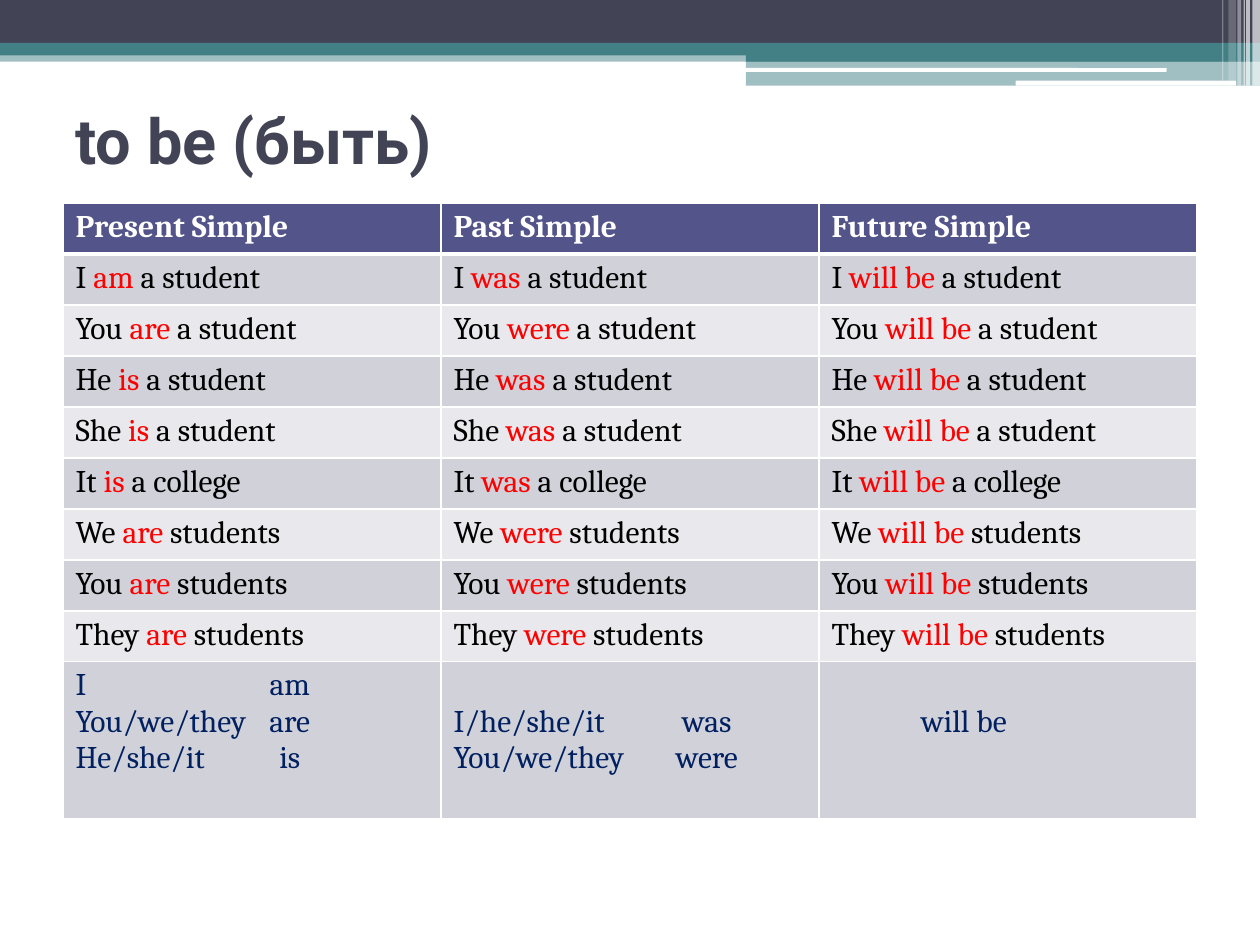
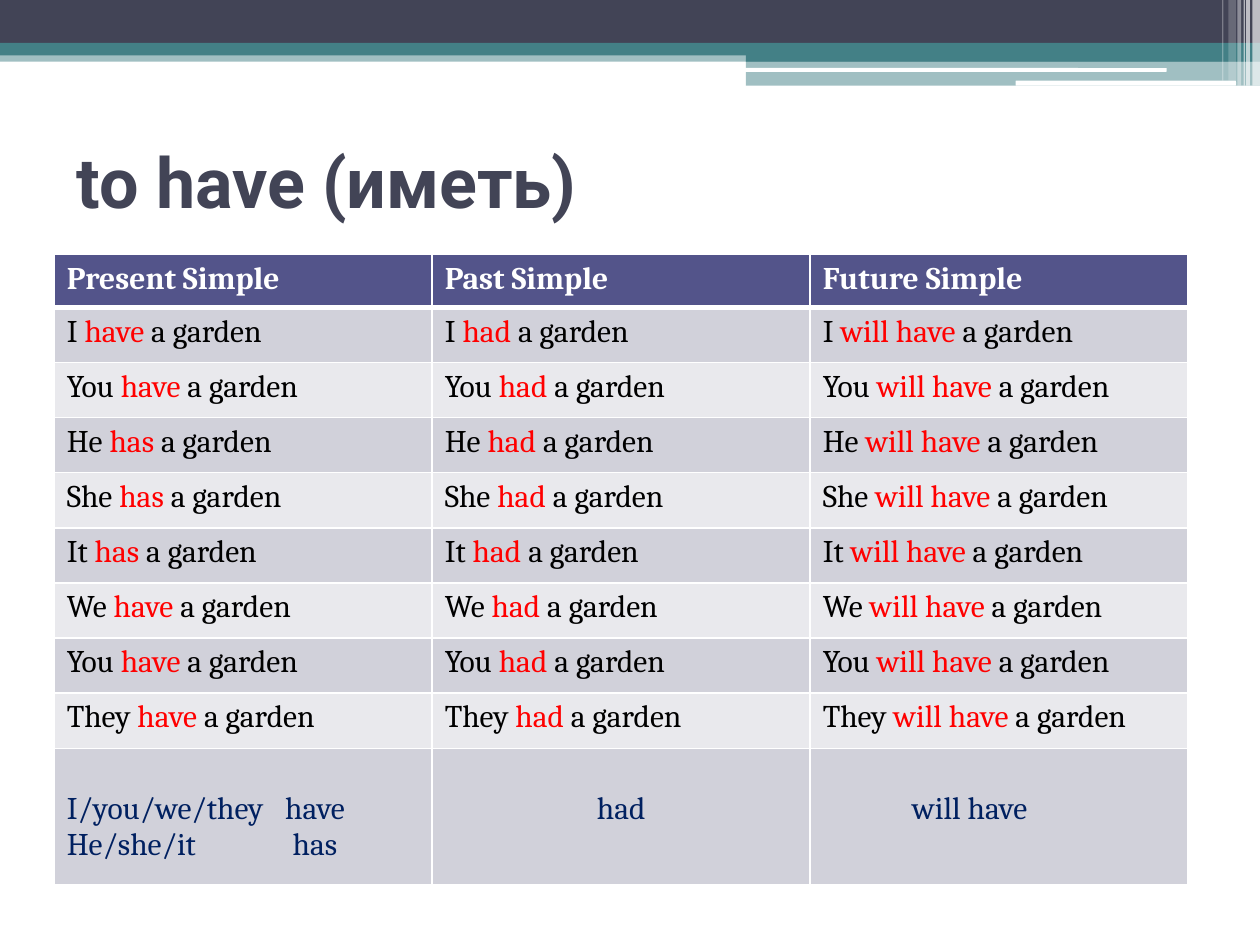
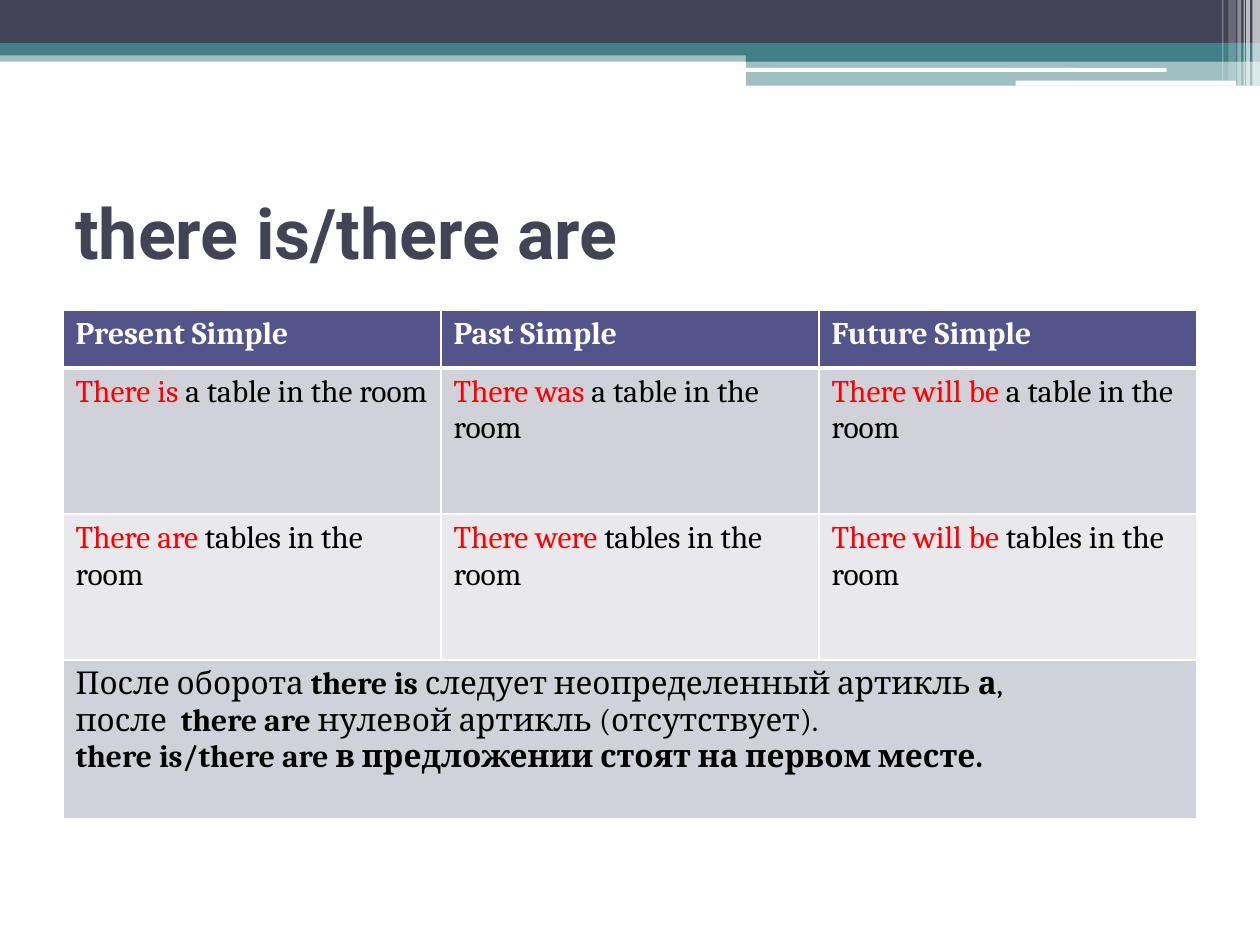
from lxml.etree import SubElement
from pptx import Presentation
from pptx.dml.color import RGBColor
from pptx.enum.shapes import MSO_SHAPE as SHAPE
from pptx.enum.text import MSO_ANCHOR as ANCHOR, PP_ALIGN as ALIGN
from pptx.oxml import parse_xml
from pptx.oxml.ns import nsdecls, qn
from pptx.util import Inches, Pt

WHITE = RGBColor(0xFF, 0xFF, 0xFF)
BLACK = RGBColor(0, 0, 0)
RED = RGBColor(0xFF, 0, 0)
NAVY = RGBColor(0, 0x20, 0x60)
SLATE = RGBColor(0x42, 0x44, 0x56)
TEAL = RGBColor(0x43, 0x80, 0x86)
INDIGO = RGBColor(0x53, 0x54, 0x8A)
DARK_ROW = RGBColor(0xD1, 0xD1, 0xDA)
LIGHT_ROW = RGBColor(0xE9, 0xE9, 0xED)

# outline, left, top, width, height, colour, opacity in percent
BANDS = [
    (SHAPE.RECTANGLE, 0, 0.4, 10, 0.09, TEAL, 50),
    (SHAPE.RECTANGLE, 0, 0, 10, 0.34, SLATE, 100),
    (SHAPE.RECTANGLE, 0, 0.34, 10, 0.1, TEAL, 100),
    (SHAPE.RECTANGLE, 5.92, 0.39, 4.08, 0.1, TEAL, 100),
    (SHAPE.RECTANGLE, 5.92, 0.48, 4.08, 0.2, TEAL, 50),
    (SHAPE.ROUNDED_RECTANGLE, 5.91, 0.54, 3.35, 0.03, WHITE, 100),
    (SHAPE.ROUNDED_RECTANGLE, 8.06, 0.64, 1.75, 0.04, WHITE, 100),
    (SHAPE.RECTANGLE, 9.94, 0, 0.06, 0.68, WHITE, 65),
    (SHAPE.RECTANGLE, 9.89, 0, 0.03, 0.68, WHITE, 65),
    (SHAPE.RECTANGLE, 9.87, 0, 0.01, 0.68, WHITE, 60),
    (SHAPE.RECTANGLE, 9.82, 0, 0.03, 0.68, WHITE, 40),
    (SHAPE.RECTANGLE, 9.75, 0, 0.06, 0.64, WHITE, 20),
    (SHAPE.RECTANGLE, 9.7, 0, 0.01, 0.64, WHITE, 30),
]

TENSES = ["Present Simple", "Past Simple", "Future Simple"]
SUBJECTS = ["I", "You", "He", "She", "It", "We", "You", "They"]
AM_ARE_IS = ["am", "are", "is", "is", "is", "are", "are", "are"]
WAS_WERE = ["was", "were", "was", "was", "was", "were", "were", "were"]
HAVE_HAS = ["have", "have", "has", "has", "has", "have", "have", "have"]
COMPLEMENTS = ["a student"] * 4 + ["a college"] + ["students"] * 3

be_rows = [
    [f"{subject} *{verb}* {rest}" for verb in (present, past, "will be")]
    for subject, present, past, rest in zip(SUBJECTS, AM_ARE_IS, WAS_WERE, COMPLEMENTS)
]
have_rows = [
    [f"{subject} *{verb}* a garden" for verb in (present, "had", "will have")]
    for subject, present in zip(SUBJECTS, HAVE_HAS)
]
there_rows = [
    [f"*There {verb}* a table in the room" for verb in ("is", "was", "will be")],
    [f"*There {verb}* tables in the room" for verb in ("are", "were", "will be")],
]

LINE = 0.29
# text, lines left free above, paragraph format
BE_SUMMARY = [
    ("I\tam\nYou/we/they\tare\nHe/she/it\tis", 0, {"tab": 1.7}),
    ("I/he/she/it\twas\nYou/we/they\twere", 1, {"tab": 2.01}),
    ("will be", 1, {"indent": 0.71}),
]
HAVE_SUMMARY = [
    ("I/you/we/they\thave\nHe/she/it\thas", 1, {"tab": 1.97}),
    ("had", 1, {"align": ALIGN.CENTER}),
    ("will have", 1, {"indent": 0.71}),
]
THERE_RULE = [(
    "После оборота *there is* следует неопределенный артикль *а*,\n"
    "после  *there are* нулевой артикль (отсутствует).\n"
    "*there is/there are в предложении стоят на первом месте.*",
    0, {"color": BLACK, "accent_bold": True},
)]

LESSONS = [
    {"title": "to be (быть)", "size": 36, "title_box": (0.5, 0.6, 9.15, 1.01),
     "corner": (0.5, 1.61), "heights": [3.24 / 8] * 8 + [0.39, 1.25],
     "rows": be_rows, "summary": BE_SUMMARY},
    {"title": "to have (иметь)", "size": 40, "title_box": (0.51, 0.92, 9, 1.02),
     "corner": (0.43, 2.02), "heights": [0.42] + [3.5 / 8] * 8 + [1.08],
     "rows": have_rows, "summary": HAVE_SUMMARY},
    {"title": "there is/there are", "size": 40, "title_box": (0.5, 1.25, 9, 1.17),
     "corner": (0.5, 2.46), "heights": [0.46, 1.16, 1.16, 1.26],
     "rows": there_rows, "summary": THERE_RULE},
]


def write(frame, text, font="Cambria", size=18, color=BLACK, bold=False,
          accent=None, accent_bold=False, align=ALIGN.LEFT, indent=0, tab=None):
    """Fill a frame line by line; parts between asterisks take the accent format."""
    for number, line in enumerate(text.split("\n")):
        paragraph = frame.paragraphs[0] if number == 0 else frame.add_paragraph()
        paragraph.alignment = align
        properties = paragraph._p.get_or_add_pPr()
        properties.set("marL", str(Inches(indent)))
        if tab:
            stops = SubElement(properties, qn("a:tabLst"))
            SubElement(stops, qn("a:tab"), pos=str(Inches(tab)), algn="ctr")
        for position, part in enumerate(line.split("*")):
            if not part:
                continue
            accented = position % 2 == 1
            run = paragraph.add_run()
            run.text = part
            run.font.name = font
            run.font.size = Pt(size)
            run.font.bold = accent_bold if accented else bold
            run.font.color.rgb = accent if accented and accent else color


def finish_cell(cell, color, top_width, bottom_width):
    """Fill a cell and draw its white borders, widths in points."""
    cell.fill.solid()
    cell.fill.fore_color.rgb = color
    widths = {"lnL": 1, "lnR": 1, "lnT": top_width, "lnB": bottom_width}
    for order, (side, width) in enumerate(widths.items()):
        cell._tc.get_or_add_tcPr().insert(order, parse_xml(
            f'<a:{side} {nsdecls("a")} w="{Pt(width)}"><a:solidFill>'
            f'<a:srgbClr val="{WHITE}"/></a:solidFill></a:{side}>'))


deck = Presentation()
deck.slide_width = Inches(10)
deck.slide_height = Inches(7.5)

for lesson in LESSONS:
    slide = deck.slides.add_slide(deck.slide_layouts[6])

    for outline, left, top, width, height, color, opacity in BANDS:
        band = slide.shapes.add_shape(
            outline, Inches(left), Inches(top), Inches(width), Inches(height))
        band.shadow.inherit = False
        band.line.fill.background()
        band.fill.solid()
        band.fill.fore_color.rgb = color
        if opacity < 100:
            tint = band.element.spPr.find(".//" + qn("a:srgbClr"))
            SubElement(tint, qn("a:alpha"), val=str(opacity * 1000))

    heading = slide.shapes.add_textbox(*map(Inches, lesson["title_box"])).text_frame
    heading.word_wrap = True
    heading.vertical_anchor = ANCHOR.MIDDLE
    write(heading, lesson["title"], font="Roboto", size=lesson["size"],
          color=SLATE, bold=True)

    heights = lesson["heights"]
    left, top = lesson["corner"]
    grid = slide.shapes.add_table(
        len(heights), len(TENSES), Inches(left), Inches(top),
        Inches(9), Inches(sum(heights))).table
    for row, height in zip(grid.rows, heights):
        row.height = Inches(height)
    for column in grid.columns:
        column.width = Inches(3)

    for r in range(len(heights)):
        color = INDIGO if r == 0 else DARK_ROW if r % 2 else LIGHT_ROW
        for c in range(len(TENSES)):
            finish_cell(grid.cell(r, c), color, 3 if r == 1 else 1, 3 if r == 0 else 1)

    for c, tense in enumerate(TENSES):
        write(grid.cell(0, c).text_frame, tense, color=WHITE, bold=True)
    for r, sentences in enumerate(lesson["rows"], start=1):
        for c, sentence in enumerate(sentences):
            write(grid.cell(r, c).text_frame, sentence, accent=RED)

    last = len(heights) - 1
    if len(lesson["summary"]) == 1:
        grid.cell(last, 0).merge(grid.cell(last, len(TENSES) - 1))
    for c, (text, free_lines, layout) in enumerate(lesson["summary"]):
        cell = grid.cell(last, c)
        cell.margin_top = Inches(0.05 + free_lines * LINE)
        write(cell.text_frame, text, **{"color": NAVY, **layout})

deck.save("out.pptx")
